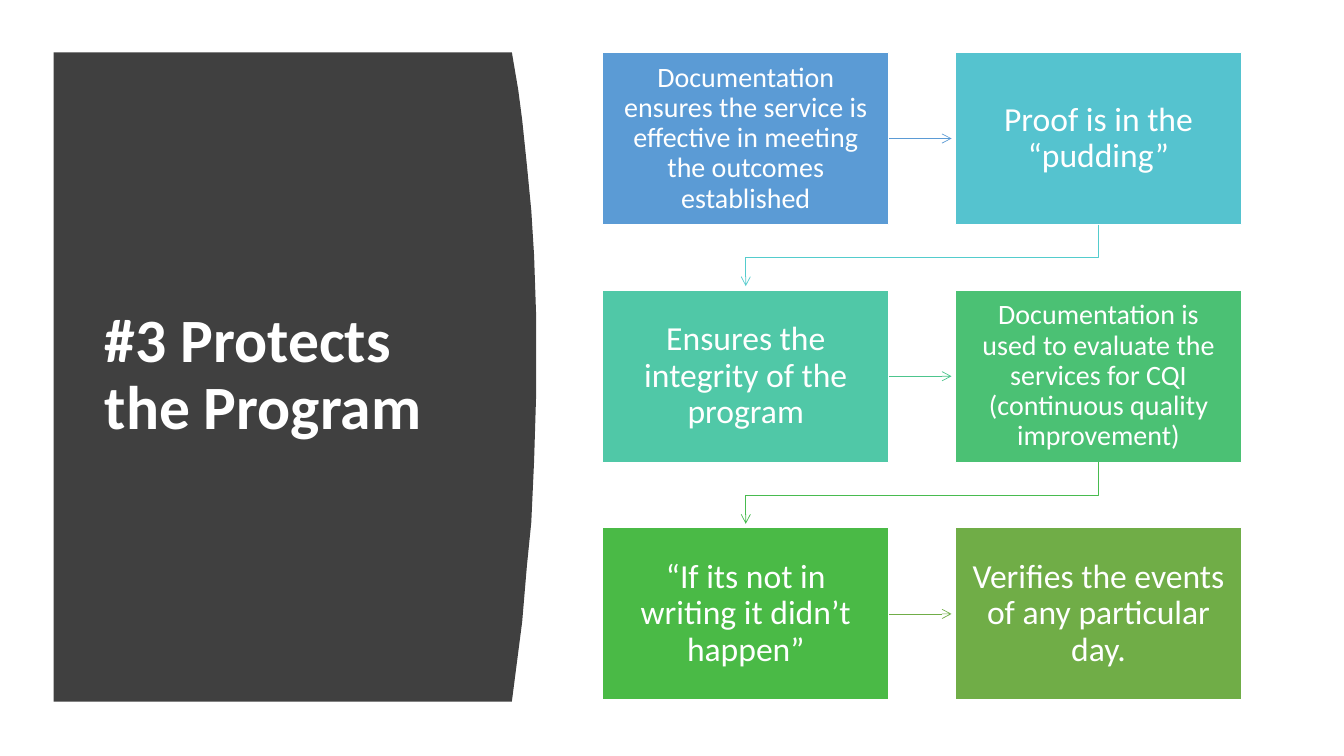
"""Build the slide "#3 Protects the Program" with a six-step snaking process."""
import pptx
import pptx.dml.color
import pptx.enum.shapes
import pptx.enum.text
import pptx.oxml
import pptx.oxml.ns
import pptx.util
from dataclasses import dataclass

Cm, Pt = pptx.util.Cm, pptx.util.Pt

TITLE = "#3 Protects the Program"
STEPS = [
    {"text": "Documentation ensures the service is effective in meeting the outcomes established",
     "size": 20, "fill": "5B9BD5", "arrow": "5B9BD5"},
    {"text": "Proof is in the “pudding”", "size": 24, "fill": "55C3CF", "arrow": "54CCCD"},
    {"text": "Ensures the integrity of the program", "size": 24, "fill": "50C8A7", "arrow": "4DC58D"},
    {"text": "Documentation is used to evaluate the services for CQI (continuous quality improvement)",
     "size": 20, "fill": "4BC174", "arrow": "48BB4F"},
    {"text": "“If its not in writing it didn’t happen”", "size": 24, "fill": "4ABA46", "arrow": "70AD47"},
    {"text": "Verifies the events of any particular day.", "size": 24, "fill": "70AD47", "arrow": None},
]
PANEL_LEFT = 1.35
PANEL_EDGE = [(12.9, 1.32), (13.06, 2.26), (13.16, 3.02), (13.28, 4.17), (13.39, 5.31),
              (13.46, 6.43), (13.51, 7.9), (13.51, 10.01), (13.46, 11.63), (13.39, 13.16),
              (13.28, 14.25), (13.16, 15.67), (12.9, 17.68)]
TITLE_BOX = (2.39, 2.82, 9.5, 13.31)
COLUMNS = 2
GRID_LEFT, GRID_TOP = 15.19, 1.32
STEP_X, STEP_Y = 8.89, 5.99
BOX_W, BOX_H = 7.21, 4.34
ARROW_GAP = 0.1


@dataclass(frozen=True)
class Theme:
    font: str = "Calibri"
    text: str = "FFFFFF"
    panel: str = "404040"
    title_size: float = 44
    border: float = 1
    arrow: float = 0.5


THEME = Theme()


def rgb(value):
    return pptx.dml.color.RGBColor.from_string(value)


def set_text(sp, text, size, bold=False, centred=False, insets=(0.25, 0.13)):
    tf = sp.text_frame
    tf.word_wrap = True
    tf.vertical_anchor = pptx.enum.text.MSO_ANCHOR.MIDDLE
    tf.margin_left = tf.margin_right = Cm(insets[0])
    tf.margin_top = tf.margin_bottom = Cm(insets[1])
    tf.text = text
    p = tf.paragraphs[0]
    p.line_spacing = 0.9
    align = pptx.enum.text.PP_ALIGN
    p.alignment = align.CENTER if centred else align.LEFT
    f = p.runs[0].font
    f.name, f.size, f.bold = THEME.font, Pt(size), bold
    f.color.rgb = rgb(THEME.text)


def draw_outline(s, points, close):
    (x, y), *rest = [(Cm(px), Cm(py)) for px, py in points]
    builder = s.shapes.build_freeform(x, y)
    builder.add_line_segments(rest, close=close)
    sp = builder.convert_to_shape()
    sp.shadow.inherit = False
    return sp


def style_arrow(sp, color):
    sp.line.color.rgb = rgb(color)
    sp.line.width = Pt(THEME.arrow)
    ln = sp.line._get_or_add_ln()
    ln.append(pptx.oxml.parse_xml(
        f'<a:tailEnd {pptx.oxml.ns.nsdecls("a")} type="arrow"/>'))


def add_panel(s):
    corners = [(PANEL_LEFT, PANEL_EDGE[0][1]), *PANEL_EDGE, (PANEL_LEFT, PANEL_EDGE[-1][1])]
    sp = draw_outline(s, corners, close=True)
    sp.fill.solid()
    sp.fill.fore_color.rgb = rgb(THEME.panel)
    sp.line.fill.background()
    title = s.shapes.add_textbox(*map(Cm, TITLE_BOX))
    set_text(title, TITLE, THEME.title_size, bold=True)


def box_origin(index):
    row, column = divmod(index, COLUMNS)
    return GRID_LEFT + column * STEP_X, GRID_TOP + row * STEP_Y


def add_box(s, index, step):
    x, y = box_origin(index)
    sp = s.shapes.add_shape(pptx.enum.shapes.MSO_SHAPE.RECTANGLE,
                            Cm(x), Cm(y), Cm(BOX_W), Cm(BOX_H))
    sp.shadow.inherit = False
    sp.fill.solid()
    sp.fill.fore_color.rgb = rgb(step["fill"])
    sp.line.color.rgb = rgb(THEME.text)
    sp.line.width = Pt(THEME.border)
    set_text(sp, step["text"], step["size"], centred=True, insets=(0.36, 0.38))
    return sp


def add_arrow(s, index, box, color):
    x, y = box_origin(index)
    next_x, next_y = box_origin(index + 1)
    if y == next_y:
        middle = Cm(y + BOX_H / 2)
        sp = s.shapes.add_connector(pptx.enum.shapes.MSO_CONNECTOR.STRAIGHT,
                                    Cm(x + BOX_W), middle, Cm(next_x - ARROW_GAP), middle)
        sp.begin_connect(box, 3)
        sp._element.spPr.append(pptx.oxml.parse_xml(
            f'<a:effectLst {pptx.oxml.ns.nsdecls("a")}/>'))
    else:
        start, end = x + BOX_W / 2, next_x + BOX_W / 2
        bottom = y + BOX_H
        turn = (bottom + next_y) / 2
        sp = draw_outline(s, [(start, bottom), (start, turn), (end, turn),
                              (end, next_y - ARROW_GAP)], close=False)
        sp.fill.background()
    style_arrow(sp, color)


def main():
    prs = pptx.Presentation()
    prs.slide_width, prs.slide_height = Cm(33.87), Cm(19.05)
    s = prs.slides.add_slide(prs.slide_layouts[6])
    add_panel(s)
    for index, step in enumerate(STEPS):
        box = add_box(s, index, step)
        if step["arrow"]:
            add_arrow(s, index, box, step["arrow"])
    prs.save("out.pptx")


if __name__ == "__main__":
    main()
